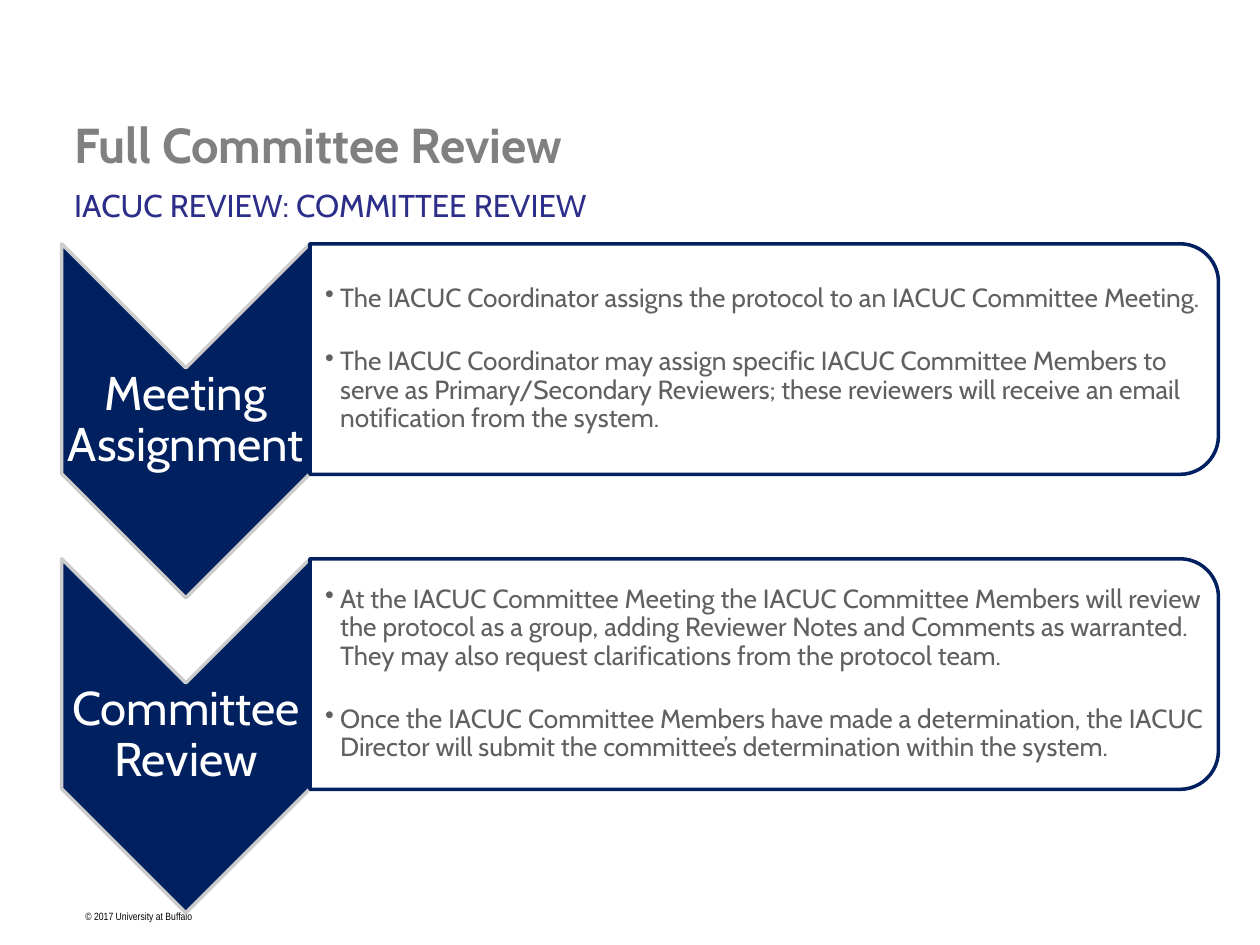
from lxml import etree
from pptx import Presentation, util as u
from pptx.dml.color import RGBColor
from pptx.enum import shapes, text
from pptx.oxml.ns import qn

WIDTH, HEIGHT = u.Inches(10), u.Inches(7.5)
COLUMN, ROW = WIDTH / 100, HEIGHT / 75

WHITE = RGBColor(0xFF, 0xFF, 0xFF)
BLACK = RGBColor(0, 0, 0)
NAVY = RGBColor(0x00, 0x20, 0x60)
SILVER = RGBColor(0xCC, 0xCC, 0xCC)
TITLE_GREY = RGBColor(0x80, 0x80, 0x80)
BODY_GREY = RGBColor(0x60, 0x60, 0x60)
INDIGO = RGBColor(0x2D, 0x2D, 0x8A)

LEFT, DIVIDE, RIGHT = 4.9, 24.6, 96.7
FIRST_STEP, STEP_PITCH = 19.35, 25
CHEVRON_ROWS, PANEL_ROWS = 28.1, 18.3

STEPS = [
    ("Meeting Assignment", [
        "The IACUC Coordinator assigns the protocol to an IACUC Committee Meeting.",
        "The IACUC Coordinator may assign specific IACUC Committee Members to serve as "
        "Primary/Secondary Reviewers; these reviewers will receive an email notification "
        "from the system.",
    ]),
    ("Committee Review", [
        "At the IACUC Committee Meeting the IACUC Committee Members will review the protocol "
        "as a group, adding Reviewer Notes and Comments as warranted. They may also request "
        "clarifications from the protocol team.",
        "Once the IACUC Committee Members have made a determination, the IACUC Director will "
        "submit the committee’s determination within the system.",
    ]),
]


def grid(column, row, columns, rows):
    """Turn grid cells into left, top, width and height."""
    return [u.Emu(round(length)) for length in
            (column * COLUMN, row * ROW, columns * COLUMN, rows * ROW)]


def apply(target, **values):
    for name, value in values.items():
        setattr(target, name, value)


def add_bullet(paragraph):
    properties = paragraph._p.get_or_add_pPr()
    apply_indent = {"marL": u.Inches(0.12), "indent": -u.Inches(0.12)}
    for name, value in apply_indent.items():
        properties.set(name, str(value))
    etree.SubElement(properties, qn("a:buChar")).set("char", "•")


def add_text(slide, place, lines, font, frame=None, paragraph_format=None, bullets=False):
    text_frame = slide.shapes.add_textbox(*grid(*place)).text_frame
    apply(text_frame, **{"word_wrap": True, **(frame or {})})
    for index, line in enumerate(lines):
        paragraph = text_frame.paragraphs[0] if index == 0 else text_frame.add_paragraph()
        if bullets:
            add_bullet(paragraph)
        apply(paragraph, **(paragraph_format or {}))
        run = paragraph.add_run()
        run.text = line
        color = font["color"]
        apply(run.font, **{"name": "Cabin",
                           **{k: v for k, v in font.items() if k != "color"}})
        run.font.color.rgb = color
    return text_frame


def add_turned_shape(slide, preset, place, fill, line):
    """Add a preset turned a quarter clockwise that covers the given place."""
    left, top, width, height = grid(*place)
    shift = (width - height) // 2
    shape = slide.shapes.add_shape(preset, left + shift, top - shift, height, width)
    shape.rotation = 90
    shape.shadow.inherit = False
    shape.fill.solid()
    shape.fill.fore_color.rgb = fill
    shape.line.color.rgb = line
    shape.line.width = u.Pt(2)
    return shape


def margins(left, other):
    return {"margin_left": u.Inches(left), "margin_top": u.Inches(other),
            "margin_right": u.Inches(other), "margin_bottom": u.Inches(other),
            "vertical_anchor": text.MSO_ANCHOR.MIDDLE}


def add_step(slide, row, label, details):
    label_columns, detail_columns = DIVIDE - LEFT, RIGHT - DIVIDE
    add_turned_shape(slide, shapes.MSO_SHAPE.CHEVRON,
                     (LEFT, row, label_columns, CHEVRON_ROWS), NAVY, SILVER)
    add_text(slide, (LEFT, row + label_columns / 2, label_columns, 8.4), [label],
             {"size": u.Pt(27), "color": WHITE}, margins(0.02, 0.02),
             {"alignment": text.PP_ALIGN.CENTER, "line_spacing": 0.9})
    panel = add_turned_shape(slide, shapes.MSO_SHAPE.ROUND_2_SAME_RECTANGLE,
                             (DIVIDE, row, detail_columns, PANEL_ROWS), WHITE, NAVY)
    fill_color = panel.fill._xPr.find(qn("a:solidFill"))[0]
    etree.SubElement(fill_color, qn("a:alpha")).set("val", "90000")
    add_text(slide, (DIVIDE, row + 0.9, detail_columns - 0.9, PANEL_ROWS - 1.8), details,
             {"size": u.Pt(15), "color": BODY_GREY}, margins(0.12, 0.01),
             {"line_spacing": 0.9, "space_after": u.Pt(20)}, bullets=True)


def main():
    deck = Presentation()
    apply(deck, slide_width=WIDTH, slide_height=HEIGHT)
    slide = deck.slides.add_slide(deck.slide_layouts[6])
    add_text(slide, (5.8, 71.7, 10.6, 2), ["© 2017 University at Buffalo"],
             {"name": "Arial Narrow", "size": u.Pt(6), "color": BLACK}, {"word_wrap": False})
    add_text(slide, (LEFT, 8.6, 70.5, 5.6), ["Full Committee Review"],
             {"size": u.Pt(28), "bold": True, "color": TITLE_GREY},
             {"vertical_anchor": text.MSO_ANCHOR.MIDDLE})
    add_text(slide, (LEFT, 14.3, 70.5, 5), ["IACUC REVIEW: COMMITTEE REVIEW"],
             {"size": u.Pt(18), "color": INDIGO})
    for index, (label, details) in enumerate(STEPS):
        add_step(slide, FIRST_STEP + index * STEP_PITCH, label, details)
    deck.save("out.pptx")


if __name__ == "__main__":
    main()
